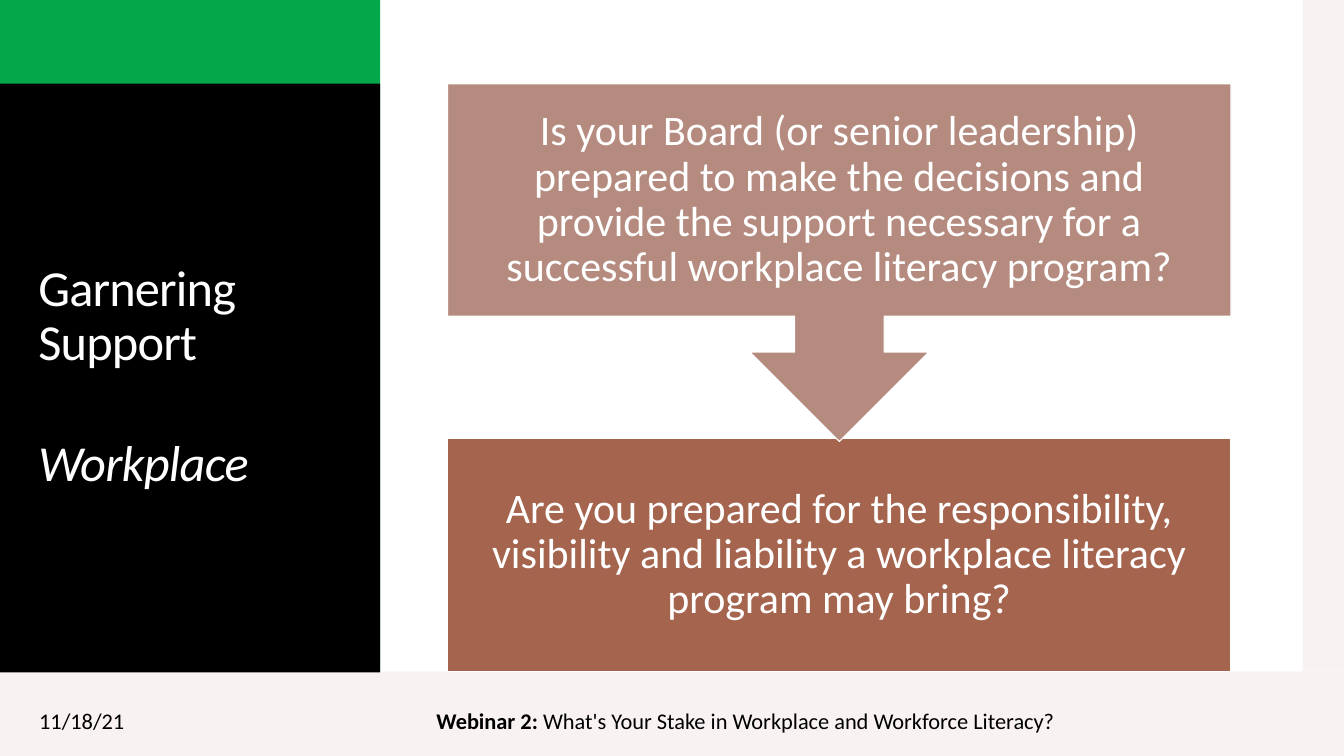
from pptx import Presentation
from pptx.dml.color import RGBColor
from pptx.enum.shapes import MSO_SHAPE as Shape
from pptx.enum.text import MSO_ANCHOR as Anchor, MSO_AUTO_SIZE as AutoSize, PP_ALIGN as Align
from pptx.util import Inches, Pt

COLORS = {
    "page": "FFFFFF",
    "margin": "F8F3F2",
    "accent": "04A84A",
    "panel": "000000",
    "ink": "000000",
    "light": "FFFFFF",
    "first": "B58B80",
    "second": "A5644E",
}


class SlideBuilder:
    font = "Calibri"

    def __init__(self, slide):
        self.slide = slide
        background = slide.background.fill
        background.solid()
        background.fore_color.rgb = self.color("page")

    def color(self, name):
        return RGBColor.from_string(COLORS[name])

    def block(self, box, fill, kind=Shape.RECTANGLE, outline=None, rotation=0):
        block = self.slide.shapes.add_shape(kind, *map(Inches, box))
        block.shadow.inherit = False
        block.rotation = rotation
        block.fill.solid()
        block.fill.fore_color.rgb = self.color(fill)
        if outline:
            block.line.color.rgb = self.color(outline)
            block.line.width = Pt(0.85)
        else:
            block.line.fill.background()

    def style_run(self, run, size, color):
        run.font.name = self.font
        run.font.size = Pt(size)
        run.font.color.rgb = self.color(color)

    def set_text(self, frame, parts, size, color, align=Align.LEFT, spacing=1.0):
        frame.word_wrap = True
        frame.auto_size = AutoSize.NONE
        frame.vertical_anchor = Anchor.MIDDLE
        paragraph = frame.paragraphs[0]
        paragraph.text = parts[0]
        for part in parts[1:]:
            paragraph.add_run().text = part
        paragraph.alignment = align
        paragraph.line_spacing = spacing
        for run in paragraph.runs:
            self.style_run(run, size, color)
        return paragraph.runs

    def label(self, box, parts, size, color, inset=None, **layout):
        frame = self.slide.shapes.add_textbox(*map(Inches, box)).text_frame
        if inset is not None:
            frame.margin_left = frame.margin_right = Inches(inset)
            frame.margin_top = frame.margin_bottom = Inches(inset)
        return self.set_text(frame, parts, size, color, **layout)

    def title(self, box, parts, size, color):
        title = self.slide.shapes.title
        title.left, title.top, title.width, title.height = map(Inches, box)
        self.slide.shapes._spTree.append(title._element)
        runs = self.set_text(title.text_frame, parts, size, color, spacing=0.9)
        for run in runs:
            run.font._element.set("spc", "-60")
        return runs

    def question(self, box, text):
        self.label(box, [text], 30, "light", inset=0.23, align=Align.CENTER, spacing=0.9)


def main():
    deck = Presentation()
    deck.slide_width, deck.slide_height = Inches(13.33), Inches(7.5)
    page = SlideBuilder(deck.slides.add_slide(deck.slide_layouts[5]))

    page.block((-0.04, 6.66, 13.38, 0.85), "margin")
    page.block((0, 0, 3.77, 6.66), "accent")
    page.block((12.92, 0, 0.42, 6.66), "margin")
    page.label((0.29, 6.95, 3, 0.4), ["11/18/21"], 16, "ink")
    webinar = page.label(
        (4.23, 6.95, 6.46, 0.4),
        ["Webinar 2: ", "What's Your Stake in Workplace and Workforce Literacy?"],
        16, "ink",
    )
    webinar[0].font.bold = True

    page.block((0, 0.83, 3.77, 5.84), "panel")
    heading = page.title(
        (0.28, 1.23, 3.22, 5.03), ["Garnering Support\v\v", "Workplace"], 36, "light"
    )
    heading[-1].font.italic = True

    left, width, height = 4.44, 7.77, 2.31
    first_box = (left, 0.83, width, height)
    second_box = (left, 4.35, width, height)
    page.block(second_box, "second", outline="light")
    page.question(
        second_box,
        "Are you prepared for the responsibility, visibility and liability "
        "a workplace literacy program may bring?",
    )
    page.block((left, 0.83, width, 3.55), "first", Shape.UP_ARROW_CALLOUT, "light", 180)
    page.question(
        first_box,
        "Is your Board (or senior leadership) prepared to make the decisions and "
        "provide the support necessary for a successful workplace literacy program?",
    )
    deck.save("out.pptx")


if __name__ == "__main__":
    main()
